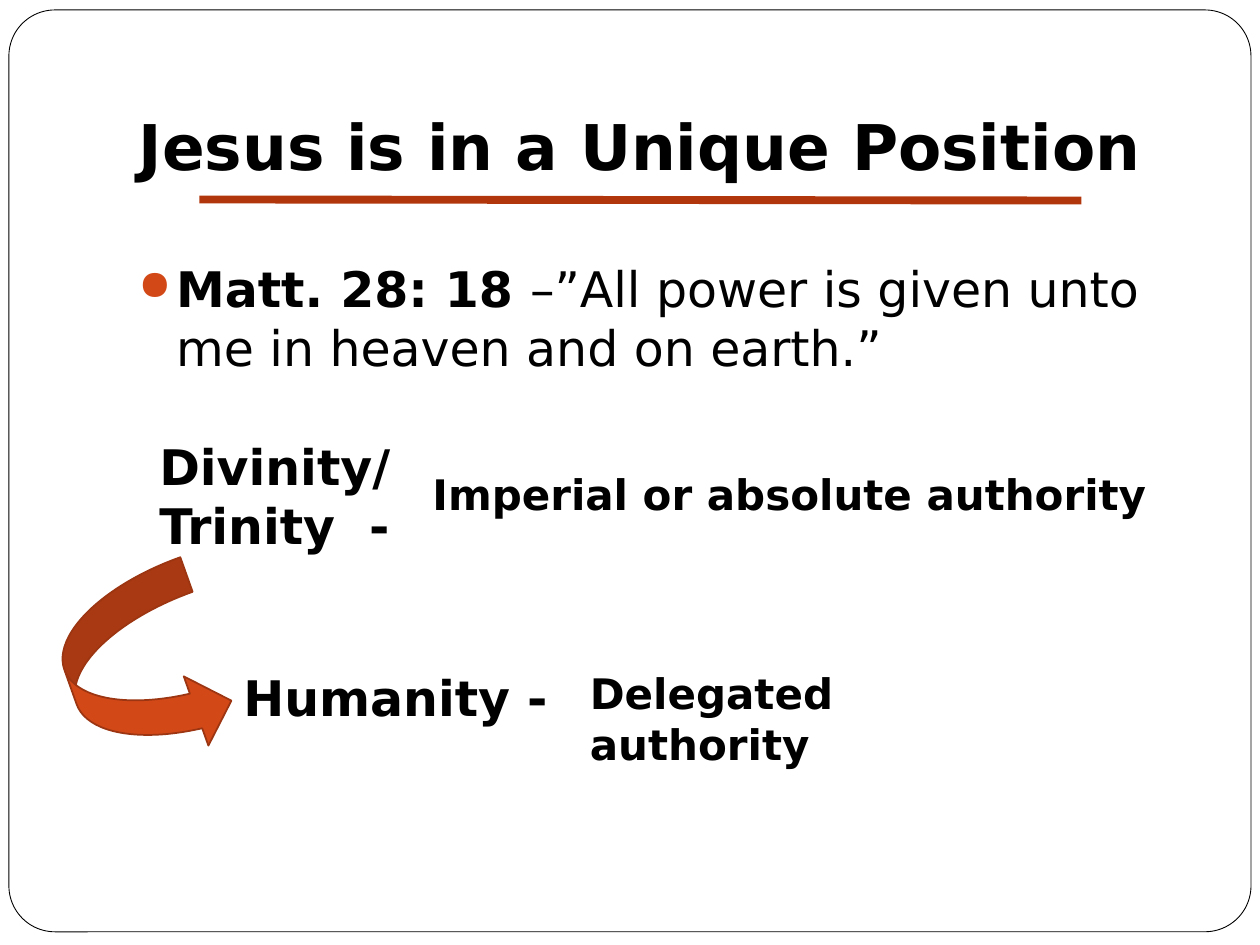
from dataclasses import dataclass

from lxml.etree import SubElement
from pptx import Presentation
from pptx.dml.color import RGBColor as RGB
from pptx.enum.shapes import MSO_CONNECTOR as CONN, MSO_SHAPE as SHAPE
from pptx.enum.text import MSO_ANCHOR as ANCHOR, MSO_AUTO_SIZE as AUTO, PP_ALIGN as ALIGN
from pptx.oxml.ns import qn
from pptx.util import Inches, Pt

COLS, ROWS = 120, 90


@dataclass(frozen=True)
class Theme:
    """Colours, font and type sizes of the slide."""
    font: str = "DejaVu Sans"
    ink: RGB = RGB(0, 0, 0)
    paper: RGB = RGB(255, 255, 255)
    accent: RGB = RGB(0xD3, 0x48, 0x17)
    rule: RGB = RGB(0xB1, 0x36, 0x0B)
    edge: RGB = RGB(0x9C, 0x35, 0x11)
    title: float = 36
    body: float = 28
    note: float = 24


T = Theme()


def grid(*cells):
    """Turn column and row pairs into lengths."""
    return [Inches(c * (10 / COLS if i % 2 == 0 else 7.5 / ROWS)) for i, c in enumerate(cells)]


def set_all(obj, values):
    """Set attributes from a dict of format values."""
    for name, value in values.items():
        setattr(obj, name, value)


def write(p, text, size, bold=True):
    """Add one formatted run to a paragraph."""
    r = p.add_run()
    r.text = text
    set_all(r.font, {"name": T.font, "size": Pt(size), "bold": bold})
    r.font.color.rgb = T.ink


def text_box(shapes, box, **frame):
    """Add a text box on grid cells and return its text frame."""
    tf = shapes.add_textbox(*grid(*box)).text_frame
    set_all(tf, {"word_wrap": True, **frame})
    return tf


def paint(sp, fill, line, width):
    """Give a shape a flat fill and outline."""
    sp.shadow.inherit = False
    sp.fill.solid()
    sp.fill.fore_color.rgb = fill
    sp.line.color.rgb = line
    sp.line.width = Pt(width)


def add_frame(s, box):
    """Place the rounded page frame behind the title."""
    sp = s.shapes.add_shape(SHAPE.ROUNDED_RECTANGLE, *grid(*box))
    sp.adjustments[0] = 0.05
    paint(sp, T.paper, T.ink, 0.5)
    s.shapes.title._element.addprevious(sp._element)


def add_title(s, box, text):
    """Place the title and the rule below it."""
    x, y, w, h = box
    title = s.shapes.title
    set_all(title, dict(zip(("left", "top", "width", "height"), grid(*box))))
    tf = title.text_frame
    set_all(tf, {"vertical_anchor": ANCHOR.BOTTOM, "auto_size": AUTO.NONE,
                 "word_wrap": True, "margin_bottom": Inches(0.1)})
    p = tf.paragraphs[0]
    p.alignment = ALIGN.LEFT
    write(p, text, T.title)
    rule = s.shapes.add_connector(CONN.STRAIGHT, *grid(x + 7, y + h + 0.4, x + w - 11, y + h + 0.5))
    rule.line.color.rgb = T.rule
    rule.line.width = Pt(4.5)
    SubElement(rule._element.spPr, qn("a:effectLst"))


def add_verse(s, box, source, quote):
    """Place the bulleted verse."""
    p = text_box(s.shapes, box).paragraphs[0]
    p.space_before = Pt(5.8)
    write(p, source, T.body)
    write(p, quote, T.body, bold=False)
    pr = p._p.get_or_add_pPr()
    pr.set("marL", str(Inches(0.3)))
    pr.set("indent", str(-Inches(0.3)))
    color = SubElement(pr, qn("a:buClr"))
    SubElement(color, qn("a:srgbClr"), val=str(T.accent))
    SubElement(pr, qn("a:buSzPct"), val="85000")
    SubElement(pr, qn("a:buChar"), char="●")


def add_pair(s, box, label_w, gap, drop, label, note, **frame):
    """Place a grouped label and the authority beside it."""
    x, y, w, h = box
    shapes = s.shapes.add_group_shape().shapes
    note_x = label_w + gap
    parts = [((x, y, label_w, h), label, T.body, {}),
             ((x + note_x, y + drop, w - note_x, 6), note, T.note, frame)]
    for cells, text, size, extra in parts:
        write(text_box(shapes, cells, **extra).paragraphs[0], text, size)


def add_arrow(s, box):
    """Place the tilted curved arrow."""
    sp = s.shapes.add_shape(SHAPE.CURVED_RIGHT_ARROW, *grid(*box))
    sp.rotation = 340.4
    paint(sp, T.accent, T.edge, 1)


def main():
    """Build and save the slide."""
    prs = Presentation()
    set_all(prs, {"slide_width": Inches(10), "slide_height": Inches(7.5)})
    s = prs.slides.add_slide(prs.slide_layouts[5])
    add_frame(s, (0.85, 0.95, 118.3, 87.8))
    add_title(s, (12, 3.6, 102, 15), "Jesus is in a Unique Position")
    add_verse(s, (12, 24, 102, 15), "Matt. 28: 18 ",
              "–”All power is given unto me in heaven and on earth.”")
    add_pair(s, (14, 41, 97.2, 12.5), 27, -1, 3, "Divinity/Trinity  -",
             "Imperial or absolute authority", word_wrap=False)
    add_pair(s, (22, 63, 80.6, 6.9), 32, 1, 0, "Humanity -",
             "Delegated authority", margin_right=Inches(1.5))
    add_arrow(s, (6.6, 54.9, 14, 18))
    prs.save("out.pptx")


if __name__ == "__main__":
    main()
